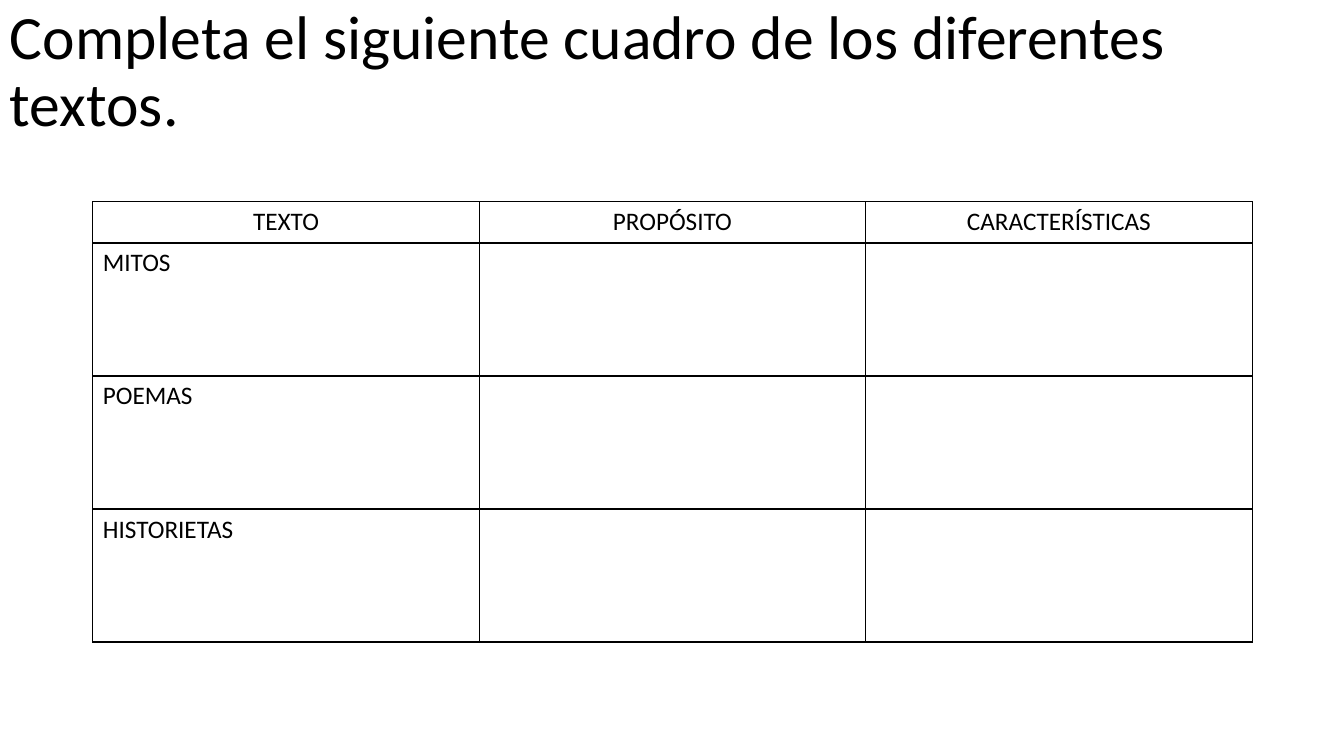
"""Build a slide with a blank comparison table of text types."""
import pptx
import pptx.dml.color
import pptx.enum.text
import pptx.oxml
import pptx.oxml.ns
import pptx.util
from pptx.util import Inches, Pt

TITLE = "Completa el siguiente cuadro de los diferentes textos."
HEADINGS = ["TEXTO", "PROPÓSITO", "CARACTERÍSTICAS"]
TEXT_TYPES = ["MITOS", "POEMAS", "HISTORIETAS"]
INK = "000000"
HEADING_HEIGHT, TYPE_HEIGHT = 0.41, 1.32
TABLE_LEFT, TABLE_TOP, TABLE_WIDTH = 0.92, 2, 11.5


def style_font(paragraph, size, color=INK):
    paragraph.font.name = "Calibri"
    paragraph.font.size = Pt(size)
    paragraph.font.color.rgb = pptx.dml.color.RGBColor.from_string(color)


def add_borders(cell, color=INK):
    properties = cell._tc.get_or_add_tcPr()
    for position, side in enumerate(("lnL", "lnR", "lnT", "lnB")):
        border = pptx.oxml.parse_xml(
            f'<a:{side} {pptx.oxml.ns.nsdecls("a")} w="{Pt(1)}"><a:solidFill>'
            f'<a:srgbClr val="{color}"/></a:solidFill></a:{side}>'
        )
        properties.insert(position, border)


def add_title(slide):
    title = slide.shapes.add_textbox(0, 0, Inches(13.29), Inches(1.45)).text_frame
    title.word_wrap = True
    title.vertical_anchor = pptx.enum.text.MSO_ANCHOR.MIDDLE
    title.text = TITLE
    title.paragraphs[0].line_spacing = 0.9
    style_font(title.paragraphs[0], 44)


def add_text_table(slide):
    rows = [HEADINGS] + [[name, "", ""] for name in TEXT_TYPES]
    heights = [HEADING_HEIGHT] + [TYPE_HEIGHT] * len(TEXT_TYPES)
    table = slide.shapes.add_table(
        len(rows), len(HEADINGS), Inches(TABLE_LEFT), Inches(TABLE_TOP),
        Inches(TABLE_WIDTH), Inches(sum(heights)),
    ).table
    table.first_row = table.horz_banding = False
    for row_index, (texts, height) in enumerate(zip(rows, heights)):
        table.rows[row_index].height = Inches(height)
        for column_index, text in enumerate(texts):
            cell = table.cell(row_index, column_index)
            cell.text = text
            cell.fill.background()
            add_borders(cell)
            paragraph = cell.text_frame.paragraphs[0]
            style_font(paragraph, 18)
            if row_index == 0:
                paragraph.alignment = pptx.enum.text.PP_ALIGN.CENTER


def main():
    deck = pptx.Presentation()
    deck.slide_width, deck.slide_height = Inches(13.33), Inches(7.5)
    slide = deck.slides.add_slide(deck.slide_layouts[6])
    add_title(slide)
    add_text_table(slide)
    deck.save("out.pptx")


if __name__ == "__main__":
    main()
